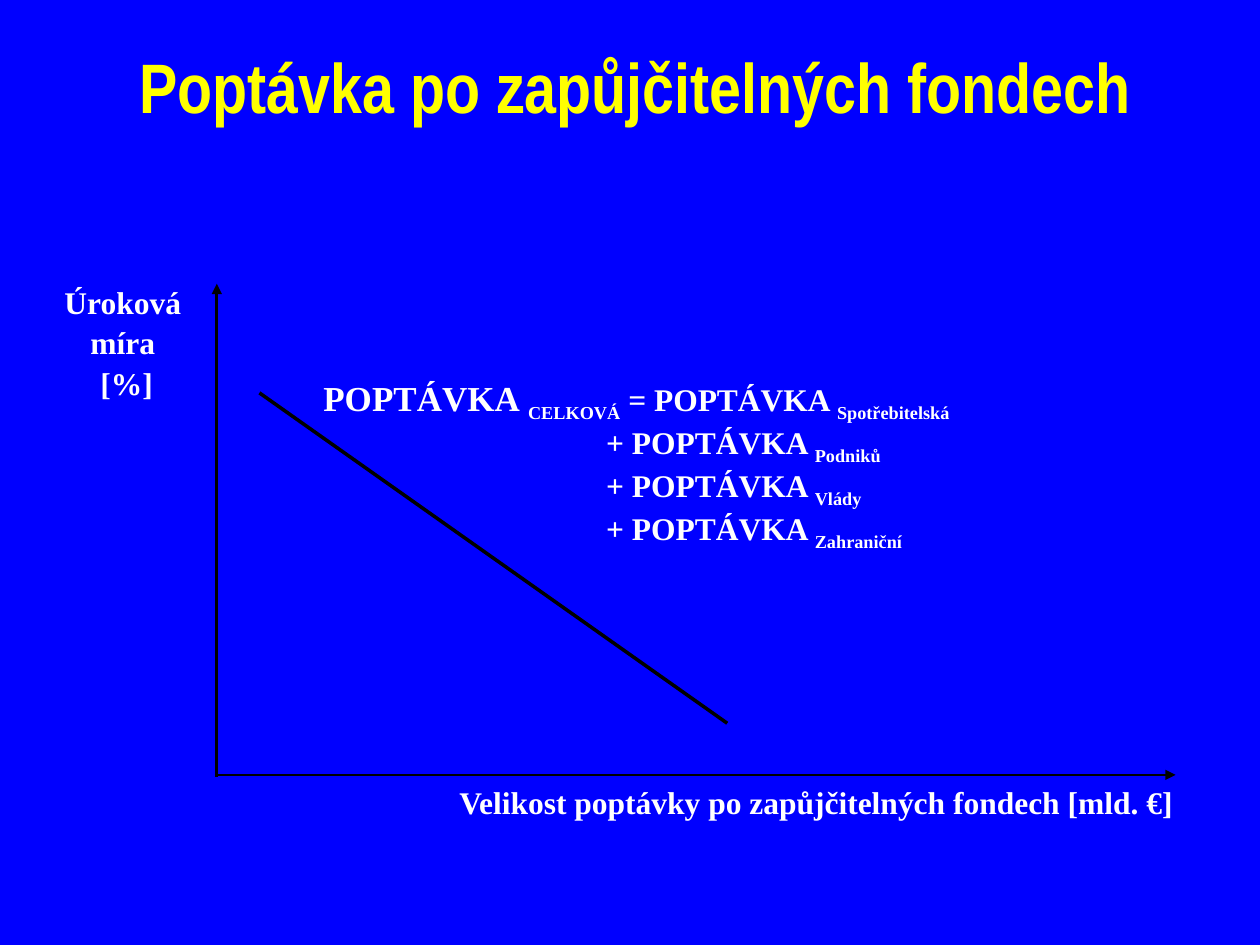
"""Builds a slide on the demand for loanable funds."""
from dataclasses import dataclass
from typing import NamedTuple

import lxml.etree
import pptx
import pptx.dml.color
import pptx.enum.shapes
import pptx.enum.text
import pptx.oxml.ns
import pptx.util

Cm = pptx.util.Cm
Pt = pptx.util.Pt
RGB = pptx.dml.color.RGBColor
Align = pptx.enum.text.PP_ALIGN
Anchor = pptx.enum.text.MSO_ANCHOR


@dataclass(frozen=True)
class Theme:
    background: RGB = RGB(0x00, 0x00, 0xFF)
    title: RGB = RGB(0xFF, 0xFF, 0x00)
    text: RGB = RGB(0xFF, 0xFF, 0xFF)
    line: RGB = RGB(0x00, 0x00, 0x00)
    title_font: str = "Arial Narrow"
    body_font: str = "Times New Roman"
    title_size: int = 40
    lead_size: int = 20
    body_size: int = 18
    axis_width: float = 1.5
    curve_width: float = 2


THEME = Theme()


class Box(NamedTuple):
    left: float
    top: float
    width: float
    height: float


class Line(NamedTuple):
    start: tuple[float, float]
    end: tuple[float, float]
    width: float
    arrow: str = ""


class Run(NamedTuple):
    text: str
    size: int = THEME.body_size
    sub: bool = False


class Para(NamedTuple):
    runs: list[Run]
    indent: float = 0


LINES = [
    Line((4.37, 5.72), (4.37, 15.67), THEME.axis_width, "headEnd"),
    Line((4.37, 15.62), (23.7, 15.62), THEME.axis_width, "tailEnd"),
    Line((5.23, 7.92), (14.66, 14.58), THEME.curve_width),
]

TERM_INDENT = 5.82
TERMS = [("+ ", "Podniků"), ("+ ", "Vlády"), ("+ ", "Zahraniční")]
DEMAND = [
    Para([Run("POPTÁVKA", THEME.lead_size), Run(" "), Run("CELKOVÁ", sub=True),
          Run(" = POPTÁVKA "), Run("Spotřebitelská", sub=True)], 0.12),
    *(Para([Run(f"{sign}POPTÁVKA "), Run(name, sub=True)], TERM_INDENT)
      for sign, name in TERMS),
]


def add_text(slide, box: Box, paras: list[Para], *, font: str = THEME.body_font,
             color: RGB = THEME.text, align=Align.LEFT, anchor=Anchor.TOP,
             spacing: float = 1.0, after: float = 0) -> None:
    """Add a wrapped text box of bold paragraphs."""
    tf = slide.shapes.add_textbox(*map(Cm, box)).text_frame
    tf.word_wrap = True
    tf.vertical_anchor = anchor
    for i, para in enumerate(paras):
        p = tf.paragraphs[0] if i == 0 else tf.add_paragraph()
        p.alignment = align
        p.line_spacing = spacing
        p.space_after = Pt(after)
        if para.indent:
            p._p.get_or_add_pPr().set("marL", str(Cm(para.indent)))
        for run in para.runs:
            r = p.add_run()
            r.text = run.text
            r.font.name = font
            r.font.size = Pt(run.size)
            r.font.bold = True
            r.font.color.rgb = color
            if run.sub:
                r.font._element.set("baseline", "-25000")


def add_line(slide, line: Line) -> None:
    """Draw a straight line with an optional arrowhead."""
    ends = map(Cm, (*line.start, *line.end))
    c = slide.shapes.add_connector(pptx.enum.shapes.MSO_CONNECTOR.STRAIGHT, *ends)
    c.line.color.rgb = THEME.line
    c.line.width = Pt(line.width)
    qn = pptx.oxml.ns.qn
    if line.arrow:
        ln = c.line._get_or_add_ln()
        lxml.etree.SubElement(ln, qn(f"a:{line.arrow}"), type="triangle")
    lxml.etree.SubElement(c._element.spPr, qn("a:effectLst"))


def main() -> None:
    """Build and save the slide."""
    prs = pptx.Presentation()
    prs.slide_width, prs.slide_height = Cm(25.4), Cm(19.05)
    s = prs.slides.add_slide(prs.slide_layouts[6])
    s.background.fill.solid()
    s.background.fill.fore_color.rgb = THEME.background

    add_text(s, Box(1.7, 0.53, 22.2, 2.39),
             [Para([Run("Poptávka po zapůjčitelných fondech", THEME.title_size)])],
             font=THEME.title_font, color=THEME.title,
             align=Align.CENTER, anchor=Anchor.MIDDLE)
    for line in LINES:
        add_line(s, line)
    add_text(s, Box(0.69, 5.72, 3.73, 4.06),
             [Para([Run(word)]) for word in ("Úroková ", "míra ", "[%]")],
             align=Align.CENTER, spacing=0.8, after=6)
    add_text(s, Box(6.15, 7.47, 18.54, 4.32), DEMAND)
    add_text(s, Box(7.49, 15.67, 16.41, 1.85),
             [Para([Run("Velikost poptávky po zapůjčitelných fondech [mld. €]")])],
             align=Align.RIGHT, after=6)
    prs.save("out.pptx")


if __name__ == "__main__":
    main()
